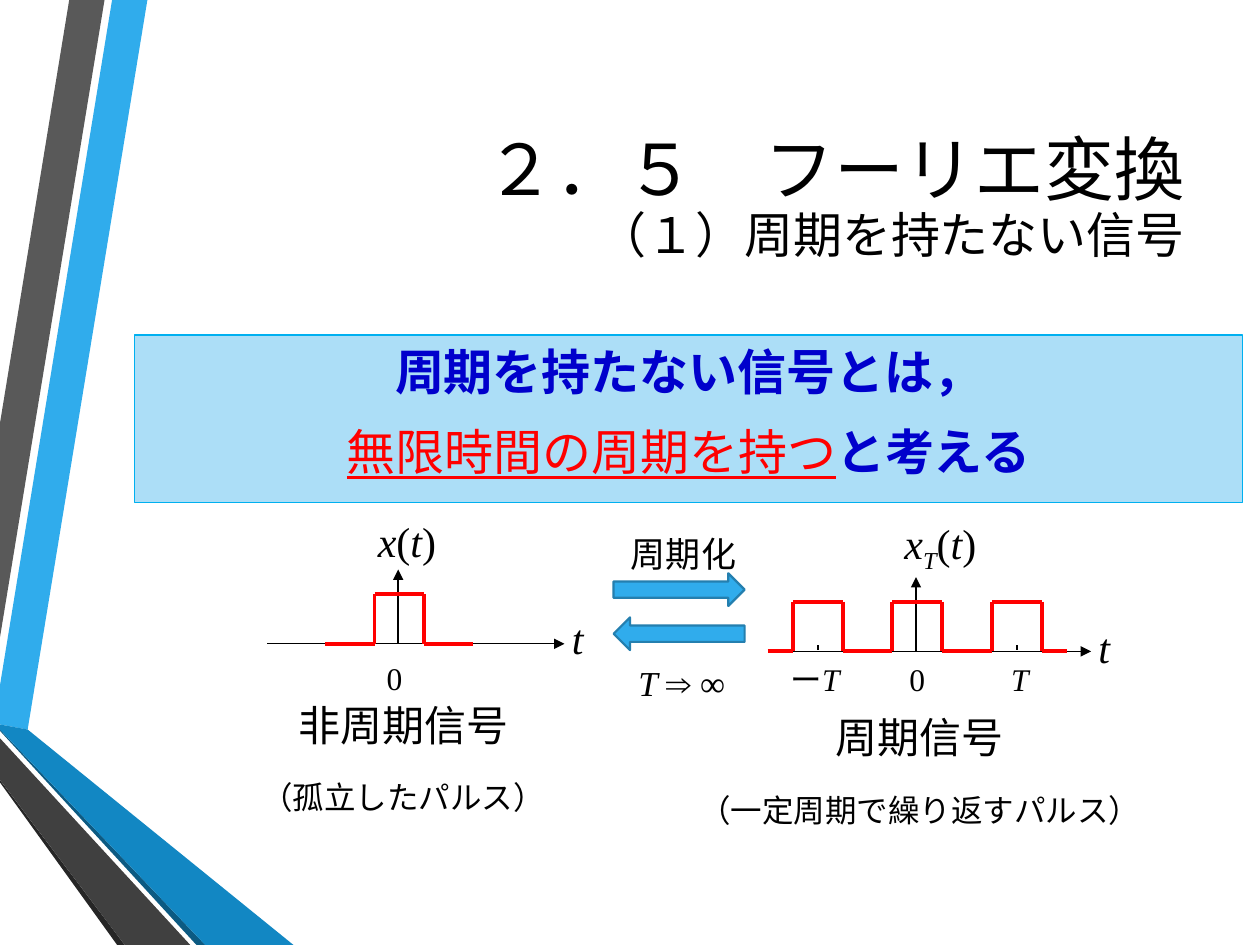
from lxml import etree
from pptx import Presentation
from pptx.dml.color import RGBColor
from pptx.enum.shapes import MSO_CONNECTOR, MSO_SHAPE
from pptx.enum.text import MSO_ANCHOR, PP_ALIGN
from pptx.oxml.ns import qn
from pptx.util import Inches, Pt

LINE = MSO_CONNECTOR.STRAIGHT
RECT = MSO_SHAPE.RECTANGLE
RIGHT, LEFT = MSO_SHAPE.RIGHT_ARROW, MSO_SHAPE.LEFT_ARROW
ALIGN = {"l": PP_ALIGN.LEFT, "c": PP_ALIGN.CENTER, "r": PP_ALIGN.RIGHT}
TOP, MIDDLE = MSO_ANCHOR.TOP, MSO_ANCHOR.MIDDLE

SERIF = "Times New Roman"
BLACK, RED, NAVY, BLUE = "000000", "FF0000", "0000CC", "30ACEC"
PITCH, PULSE = 0.79, 0.395  # period, and width and height of a pulse
ITALIC = {"italic": True}
TIME = [[("t", ITALIC)]]


def color(code):
    return RGBColor.from_string(code)


def paint(shape, fill, edge=None, width=0.75):
    shape.shadow.inherit = False
    shape.fill.solid()
    shape.fill.fore_color.rgb = color(fill)
    if edge:
        shape.line.color.rgb = color(edge)
        shape.line.width = Pt(width)
    else:
        shape.line.fill.background()


def write(shape, paras, size=24, font=SERIF, align="c", anchor=TOP,
          inset=None, lead=Pt(26), gap=6):
    """Fill a shape; each paragraph is a list of (text, format) runs."""
    frame = shape.text_frame
    frame.word_wrap = True
    frame.vertical_anchor = anchor
    if inset is not None:
        frame.margin_left = frame.margin_right = Inches(inset)
        frame.margin_top = frame.margin_bottom = Inches(inset)
    for i, runs in enumerate(paras):
        para = frame.add_paragraph() if i else frame.paragraphs[0]
        para.alignment = ALIGN[align]
        para.line_spacing = lead
        para.space_before = para.space_after = Pt(gap)
        for text, form in runs:
            if text == "\n":
                para.add_line_break()
                continue
            run = para.add_run()
            run.text = text
            face = run.font
            face.name = font
            face.size = Pt(form.get("size", size))
            face.color.rgb = color(form.get("color", BLACK))
            face.bold = form.get("bold", False)
            face.italic = form.get("italic", False)
            face.underline = form.get("under", False)
            if "base" in form:
                face._element.set("baseline", str(form["base"] * 1000))


def label(slide, x, y, w, h, paras, **form):
    box = slide.shapes.add_textbox(Inches(x), Inches(y), Inches(w), Inches(h))
    write(box, paras, **form)


def stroke(slide, x1, y1, x2, y2, code=BLACK, width=0.75, arrow=False):
    line = slide.shapes.add_connector(
        LINE, Inches(x1), Inches(y1), Inches(x2), Inches(y2))
    line.line.color.rgb = color(code)
    line.line.width = Pt(width)
    props = line._element.spPr
    if arrow:
        etree.SubElement(props.find(qn("a:ln")), qn("a:tailEnd"), type="triangle")
    etree.SubElement(props, qn("a:effectLst"))


def ribbon(slide):
    """Folded bands along the left edge."""
    bands = [
        (BLUE, [(0, 5.44), (0, 5.75), (0.22, 5.79), (1.17, 0), (0.89, 0)]),
        ("595959", [(0.83, 0), (0.55, 0), (0, 3.36), (0, 5.06)]),
        ("262626", [(0, 6.19), (0, 6.21), (0.93, 7.5), (0.99, 7.5)]),
        ("0C5A82", [(0, 5.79), (0, 5.8), (1.56, 7.5), (1.63, 7.5)]),
        ("1287C3", [(0, 5.79), (1.63, 7.5), (2.33, 7.5), (0.22, 5.79), (0, 5.75)]),
        ("404040", [(0, 6.19), (0.99, 7.5), (1.51, 7.5), (0, 5.86)]),
    ]
    for fill, points in bands:
        first, *rest = [(Inches(x), Inches(y)) for x, y in points]
        path = slide.shapes.build_freeform(*first)
        path.add_line_segments(rest, close=True)
        paint(path.convert_to_shape(), fill)


def heading(slide, x, y, w, h):
    label(slide, x, y, w, h,
          [[("２．５　フーリエ変換", {}), ("\n", {}),
            ("（１）周期を持たない信号", {"size": 28})]],
          size=40, font="Cabin", align="r", anchor=MIDDLE, lead=0.9, gap=0)


def banner(slide, x, y, w, h):
    box = slide.shapes.add_shape(RECT, Inches(x), Inches(y), Inches(w), Inches(h))
    paint(box, "ACDEF7", "00B0F0")
    strong = {"color": NAVY, "bold": True}
    write(box, [[("周期を持たない信号とは，", strong)],
                [("無限時間の周期を持つ", {"color": RED, "under": True}),
                 ("と考える", strong)]], size=28, lead=Pt(33.6))


def axes(slide, x, y, start, end):
    """Time axis from start to end, and a level axis rising from (x, y)."""
    stroke(slide, start, y, end, y, arrow=True)
    stroke(slide, x, y, x, y - 0.59, arrow=True)


def wave(slide, x, y, count, lead):
    """Train of pulses centred on x, with flat leads at both ends."""
    left = x - (count - 1) * PITCH / 2 - PULSE / 2
    points = [(left - lead, y)]
    for i in range(count):
        a = left + i * PITCH
        b = a + PULSE
        points += [(a, y), (a, y - PULSE), (b, y - PULSE), (b, y)]
    points.append((b + lead, y))
    for start, end in zip(points, points[1:]):
        stroke(slide, *start, *end, code=RED, width=2.25)


def caption(slide, x, y, w, name, note):
    label(slide, x, y, w, 1, [[(name, {})], [(note, {"size": 18})]])


def single(slide, x, y):
    """Lone pulse, origin at (x, y)."""
    axes(slide, x, y, x - 1.04, x + 1.32)
    wave(slide, x + 0.01, y, 1, 0.39)
    label(slide, x - 0.19, y + 0.01, 0.46, 0.41, [[("0", {})]], size=18, align="l")
    label(slide, x - 0.26, y - 1.03, 0.99, 0.41,
          [[("x", ITALIC), ("(", {}), ("t", ITALIC), (")", {})]], align="l")
    label(slide, x + 1.28, y - 0.26, 0.43, 0.41, TIME, align="l")
    caption(slide, x - 1.24, y + 0.43, 2.56, "非周期信号", "（孤立したパルス）")


def periodic(slide, x, y):
    """Repeated pulses, origin at (x, y)."""
    axes(slide, x, y, x - 0.98, x + 1.39)
    wave(slide, x + 0.01, y, 3, 0.2)
    for side in (-1, 1):
        tick = x + 0.01 + side * PITCH
        stroke(slide, tick, y - 0.05, tick, y - 0.01, width=1)
    marks = [(-0.8, 0.8, [("ー", {}), ("T", ITALIC)]),
             (0.01, 0.46, [("0", {})]),
             (0.825, 0.57, [("T", ITALIC)])]
    for mid, w, runs in marks:
        label(slide, x + mid - w / 2, y + 0.01, w, 0.41, [runs], size=18, inset=0)
    label(slide, x - 0.19, y - 1.02, 0.99, 0.41,
          [[("x", ITALIC), ("T", {"italic": True, "base": -25}),
            ("(", {}), ("t", ITALIC), (")", {})]], align="l")
    label(slide, x + 1.35, y - 0.25, 0.43, 0.41, TIME, align="l")
    caption(slide, x - 1.85, y + 0.47, 3.76, "周期信号", "（一定周期で繰り返すパルス）")


def swap(slide, x, y):
    """Arrows between the two kinds of signal."""
    for kind, top in ((RIGHT, y), (LEFT, y + 0.35)):
        arrow = slide.shapes.add_shape(
            kind, Inches(x), Inches(top), Inches(1.04), Inches(0.26))
        paint(arrow, BLUE, "247FAF", 1.25)
    label(slide, x - 0.03, y - 0.4, 1.17, 0.46, [[("周期化", {})]], size=20)
    label(slide, x - 0.02, y + 0.62, 1.12, 0.46,
          [[("T ", ITALIC), ("⇒ ∞", {})]], size=20)


def main():
    deck = Presentation()
    deck.slide_width, deck.slide_height = Inches(10), Inches(7.5)
    slide = deck.slides.add_slide(deck.slide_layouts[6])
    ribbon(slide)
    heading(slide, 1.07, 0.5, 8.43, 2.17)
    banner(slide, 1.07, 2.66, 8.79, 1.33)
    single(slide, 3.16, 5.11)
    periodic(slide, 7.27, 5.17)
    swap(slide, 4.87, 4.55)
    deck.save("out.pptx")


if __name__ == "__main__":
    main()
